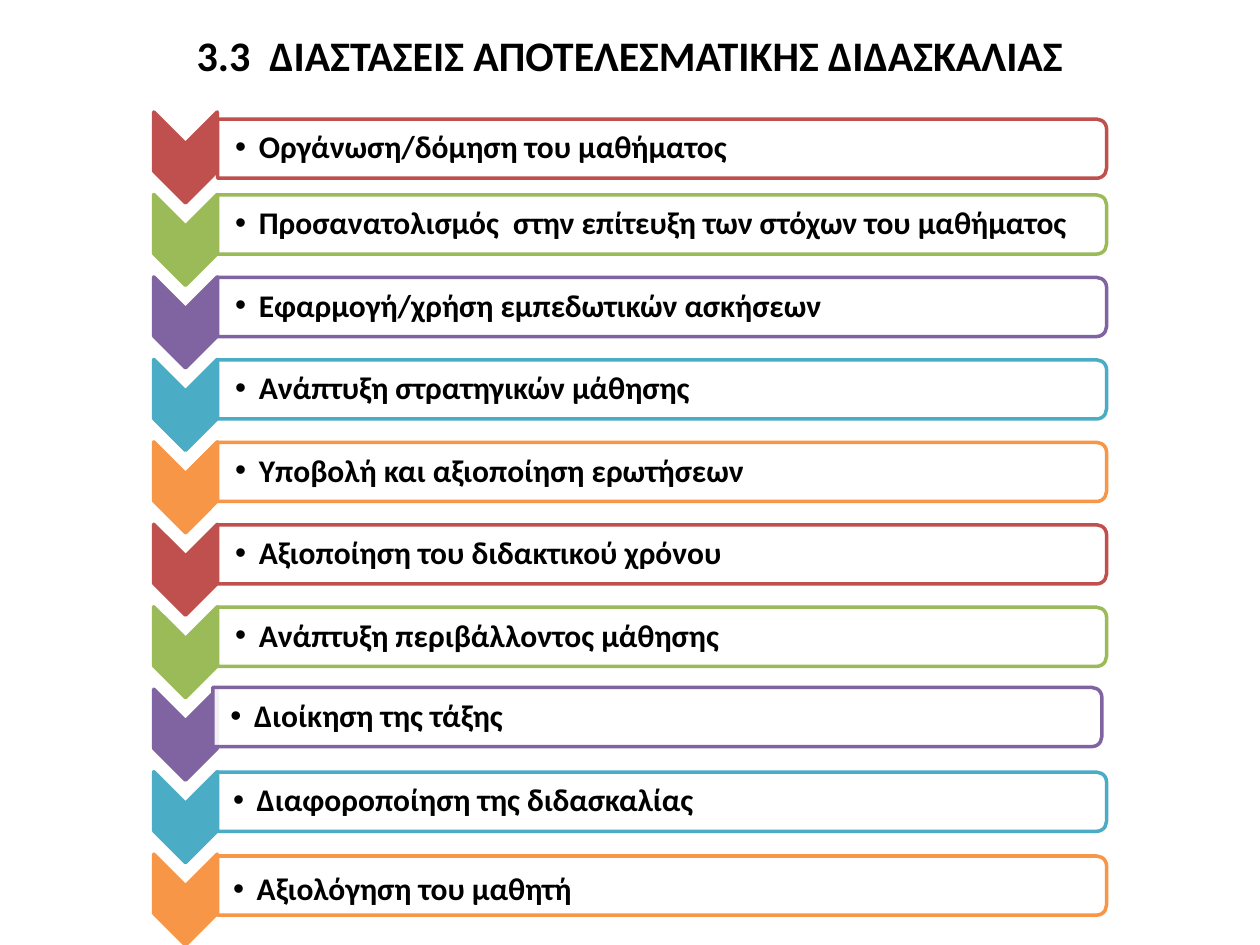
"""Build the slide on the dimensions of effective teaching."""
from lxml.etree import SubElement
from pptx import Presentation
from pptx.dml.color import RGBColor
from pptx.enum.shapes import MSO_SHAPE
from pptx.enum.text import MSO_ANCHOR, PP_ALIGN
from pptx.oxml.ns import qn
from pptx.util import Pt

BLACK = RGBColor(0x00, 0x00, 0x00)
WHITE = RGBColor(0xFF, 0xFF, 0xFF)
RED = RGBColor(0xC0, 0x50, 0x4D)
GREEN = RGBColor(0x9B, 0xBB, 0x59)
PURPLE = RGBColor(0x80, 0x64, 0xA2)
TEAL = RGBColor(0x4B, 0xAC, 0xC6)
ORANGE = RGBColor(0xF7, 0x96, 0x46)
COLORS = [RED, GREEN, PURPLE, TEAL, ORANGE]

TITLE = "3.3  ΔΙΑΣΤΑΣΕΙΣ ΑΠΟΤΕΛΕΣΜΑΤΙΚΗΣ ΔΙΔΑΣΚΑΛΙΑΣ"
DIMENSIONS = [
    "Οργάνωση/δόμηση του μαθήματος",
    "Προσανατολισμός  στην επίτευξη των στόχων του μαθήματος",
    "Εφαρμογή/χρήση εμπεδωτικών ασκήσεων",
    "Ανάπτυξη στρατηγικών μάθησης",
    "Υποβολή και αξιοποίηση ερωτήσεων",
    "Αξιοποίηση του διδακτικού χρόνου",
    "Ανάπτυξη περιβάλλοντος μάθησης",
    "Διοίκηση της τάξης",
    "Διαφοροποίηση της διδασκαλίας",
    "Αξιολόγηση του μαθητή",
]
BAR_NUDGES = {0: (0, 3.8), 7: (-2.7, -1.3), 9: (0, 0.8)}
TEXT_DROPS = {9: 2.9}
TEXT_INSETS = {8: 8.9, 9: 8.9}

CHEVRON_X, FIRST_Y, STEP = 106, 90, 47.12
CHEVRON_LENGTH, CHEVRON_SPAN = 52, 36.3
BAR_X, BAR_RISE, BAR_LENGTH, BAR_SPAN = 378.3, 8.8, 508, 33.8
TEXT_WIDTH, TEXT_HEIGHT, TEXT_INSET = 506, 30.5, 10.1
INDENT = Pt(13.5)


def add_text(para, text, size):
    span = para.add_run()
    span.text = text
    span.font.name = "Calibri"
    span.font.size = Pt(size)
    span.font.bold = True
    span.font.color.rgb = BLACK


def add_turned_shape(group, kind, center_x, center_y, width, height, fill, line):
    shape = group.shapes.add_shape(kind, Pt(center_x - width / 2), Pt(center_y - height / 2),
                                   Pt(width), Pt(height))
    shape.rotation = 90
    shape.shadow.inherit = False
    shape.fill.solid()
    shape.fill.fore_color.rgb = fill
    shape.line.color.rgb = line
    shape.line.width = Pt(2)
    return shape


def add_bullet_text(group, text, left, center_y, inset):
    box = group.shapes.add_textbox(Pt(left), Pt(center_y - TEXT_HEIGHT / 2),
                                   Pt(TEXT_WIDTH), Pt(TEXT_HEIGHT))
    frame = box.text_frame
    frame.word_wrap = True
    frame.vertical_anchor = MSO_ANCHOR.MIDDLE
    frame.margin_left = Pt(inset)
    frame.margin_top = frame.margin_right = frame.margin_bottom = Pt(0.9)
    para = frame.paragraphs[0]
    para.level = 1
    para.line_spacing = 0.9
    add_text(para, text, 18)
    properties = para._p.get_or_add_pPr()
    properties.set("marL", str(INDENT))
    properties.set("indent", str(-INDENT))
    SubElement(properties, qn("a:buFont"), typeface="Arial")
    SubElement(properties, qn("a:buChar"), char="•")


def add_dimension(group, index, text):
    color = COLORS[index % len(COLORS)]
    center_y = FIRST_Y + index * STEP
    add_turned_shape(group, MSO_SHAPE.CHEVRON, CHEVRON_X, center_y,
                     CHEVRON_LENGTH, CHEVRON_SPAN, color, color)
    shift_x, shift_y = BAR_NUDGES.get(index, (0, 0))
    bar_x, bar_y = BAR_X + shift_x, center_y - BAR_RISE + shift_y
    bar = add_turned_shape(group, MSO_SHAPE.ROUND_2_SAME_RECTANGLE, bar_x, bar_y,
                           BAR_SPAN, BAR_LENGTH, WHITE, color)
    tint = bar.fill._xPr.find(qn("a:solidFill"))[0]
    SubElement(tint, qn("a:alpha"), val="90000")
    add_bullet_text(group, text, bar_x - BAR_LENGTH / 2, bar_y + TEXT_DROPS.get(index, 0),
                    TEXT_INSETS.get(index, TEXT_INSET))


def main():
    deck = Presentation()
    deck.slide_width, deck.slide_height = Pt(720), Pt(540)
    page = deck.slides.add_slide(deck.slide_layouts[5])
    title = page.shapes.title
    title.left, title.top, title.width, title.height = Pt(0), Pt(9.4), Pt(720), Pt(44)
    title.text_frame.vertical_anchor = MSO_ANCHOR.MIDDLE
    para = title.text_frame.paragraphs[0]
    para.alignment = PP_ALIGN.CENTER
    add_text(para, TITLE, 24)
    group = page.shapes.add_group_shape()
    for index, text in enumerate(DIMENSIONS):
        add_dimension(group, index, text)
    deck.save("out.pptx")


if __name__ == "__main__":
    main()
